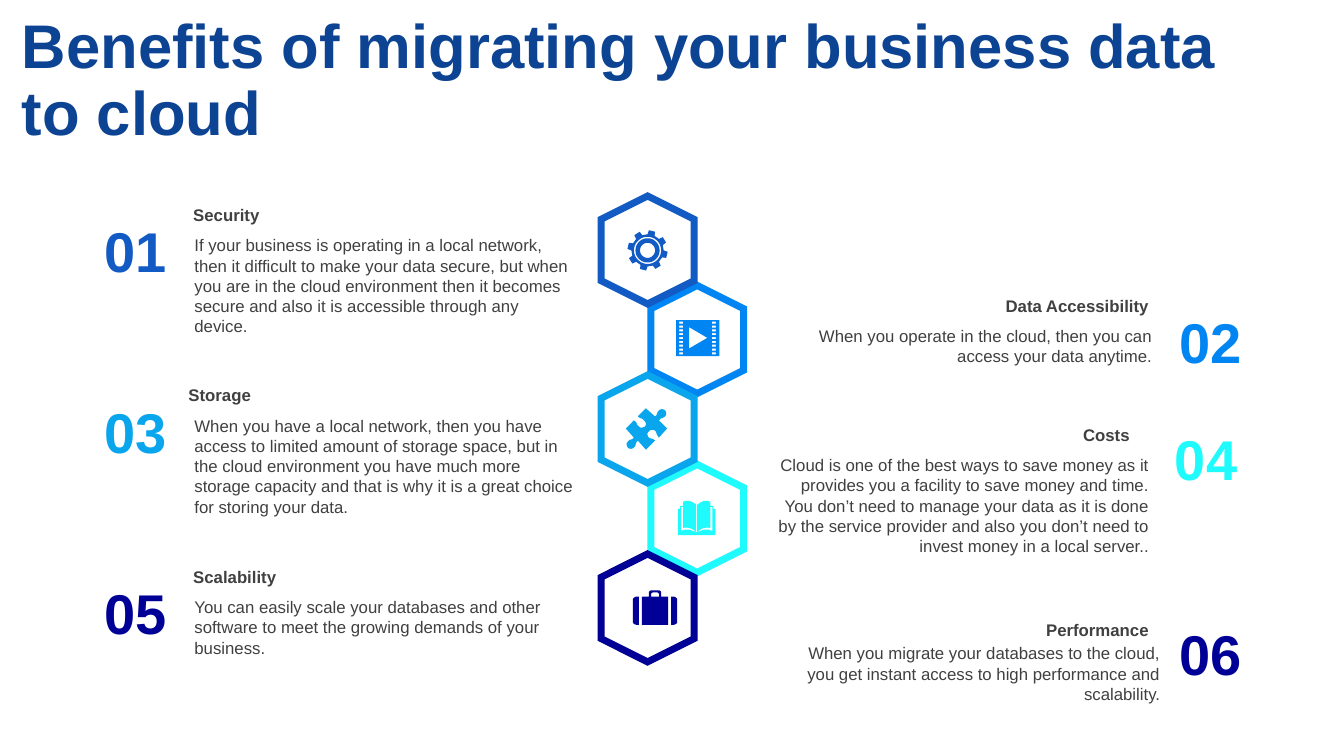
import math
from lxml import etree
from pptx import Presentation
from pptx import util as u
from pptx.dml.color import RGBColor
from pptx.enum import shapes, text

COLORS = {
    "title": "0D4393", "body": "404040", "white": "FFFFFF",
    "blue": "125AC4", "azure": "0085F2", "sky": "0AA6ED",
    "cyan": "1FFBFD", "navy": "000096",
}

prs = Presentation()
prs.slide_width, prs.slide_height = u.Cm(33.87), u.Cm(19.05)
s = prs.slides.add_slide(prs.slide_layouts[6])


def add_text(box, words, align, size, color, bold, **frame):
    sp = s.shapes.add_textbox(*[u.Cm(v) for v in box])
    tf = sp.text_frame
    for name, value in {"word_wrap": True, **frame}.items():
        setattr(tf, name, value)
    p = tf.paragraphs[0]
    p.alignment = align
    r = p.add_run()
    r.text = words
    for name, value in {"name": "Arial", "size": u.Pt(size), "bold": bold}.items():
        setattr(r.font, name, value)
    r.font.color.rgb = RGBColor.from_string(COLORS[color])
    return p


def add_icon(x, y, color, contours):
    fb = None
    for contour in contours:
        pts = []
        for step in contour:
            if len(step) == 2:
                pts.append(step)
                continue
            ctrl = [pts[-1], step[:2], step[2:4], step[4:]]
            for k in range(1, 9):
                t = k / 8
                w = [math.comb(3, i) * t**i * (1 - t)**(3 - i) for i in range(4)]
                pts.append(tuple(sum(a * c[axis] for a, c in zip(w, ctrl)) for axis in (0, 1)))
        pts = [(10 * px, 10 * py) for px, py in pts]
        if fb is None:
            fb = s.shapes.build_freeform(*pts[0], scale=u.Cm(2.54) / 1000)
        else:
            fb.move_to(*pts[0])
        fb.add_line_segments(pts[1:], close=True)
    sp = fb.convert_to_shape(u.Cm(x), u.Cm(y))
    sp.shadow.inherit = False
    sp.fill.solid()
    sp.fill.fore_color.rgb = RGBColor.from_string(COLORS[color])
    sp.line.fill.background()


p = add_text((0.3, 1.07, 32.16, 2), "Benefits of migrating your business data to cloud",
             text.PP_ALIGN.LEFT, 44, "title", True,
             vertical_anchor=text.MSO_ANCHOR.MIDDLE)
p.line_spacing = 0.9

hexagons = ["blue", "azure", "sky", "cyan", "navy"]
for i in (3, 1, 2, 0, 4):
    sp = s.shapes.add_shape(shapes.MSO_SHAPE.HEXAGON, u.Cm(14.96 + i % 2 * 1.25),
                            u.Cm(5.13 + i * 2.255), u.Cm(2.72), u.Cm(2.34))
    sp.rotation = 90
    sp.shadow.inherit = False
    sp.fill.solid()
    sp.fill.fore_color.rgb = RGBColor.from_string(COLORS["white"])
    sp.line.color.rgb = RGBColor.from_string(COLORS[hexagons[i]])
    sp.line.width = u.Pt(5)
    ns = sp.line._ln.nsmap["a"]
    etree.SubElement(sp.line._ln, f"{{{ns}}}miter", lim="800000")

L, R = text.PP_ALIGN.LEFT, text.PP_ALIGN.RIGHT
benefits = [
    ("01", "blue", L, 2.36, 4.62, 4.65, 5.03, 0.3, 0.77, "Security",
     "If your business is operating in a local network, then it difficult to make your data "
     "secure, but when you are in the cloud environment then it becomes secure and also it is "
     "accessible through any device."),
    ("02", "azure", R, 29.46, 19.2, 19.21, 7.32, 0.3, 0.77, "Data Accessibility",
     "When you operate in the cloud, then you can access your data anytime."),
    ("03", "sky", L, 2.36, 4.5, 4.65, 9.58, 0.3, 0.77, "Storage",
     "When you have a local network, then you have access to limited amount of storage space, "
     "but in the cloud environment you have much more storage capacity and that is why it is "
     "a great choice for storing your data."),
    ("04", "cyan", R, 29.34, 18.72, 19.13, 10.57, 0, 0.77, "Costs",
     "Cloud is one of the best ways to save money as it provides you a facility to save money "
     "and time. You don’t need to manage your data as it is done by the service provider and "
     "also you don’t need to invest money in a local server.."),
    ("05", "navy", L, 2.36, 4.62, 4.65, 14.15, 0.3, 0.77, "Scalability",
     "You can easily scale your databases and other software to meet the growing demands of "
     "your business."),
    ("06", "navy", R, 29.46, 19.2, 19.41, 15.49, 0, 0.59, "Performance",
     "When you migrate your databases to the cloud, you get instant access to high "
     "performance and scalability."),
]
grow = {"auto_size": text.MSO_AUTO_SIZE.SHAPE_TO_FIT_TEXT}
for num, color, align, num_x, head_x, body_x, y, num_dy, body_dy, head, body in benefits:
    lines = 1 + len(body) // 50
    add_text((num_x, y + num_dy, 2.11, 1.96), num, text.PP_ALIGN.CENTER, 40, color, True, **grow)
    add_text((body_x, y + body_dy, 10.08, 0.25 + 0.51 * lines), body, align, 12, "body", False, **grow)
    add_text((head_x, y, 10, 0.76), head, align, 12, "body", True, **grow)

teeth = [(r * math.sin(math.radians(a)), -r * math.cos(math.radians(a)))
         for n in range(8)
         for r, a in ((16, 45 * n), (20, 45 * n + 4), (20, 45 * n + 22), (16, 45 * n + 26))]
rings = [[(r * math.cos(math.radians(a)), r * math.sin(math.radians(a)))
          for a in range(0, 360, 10)] for r in (13.5, 12, 7.5)]
add_icon(16.32, 6.31, "blue", [teeth] + rings)

film = [[(0, 0), (43, 0), (43, 35.5), (0, 35.5)], [(13, 7), (13, 28), (31, 17.5)]]
for row in range(9):
    top = 1.5 + 3.8 * row
    film += [[(x, top), (x + 4, top), (x + 4, top + 2), (x, top + 2)] for x in (3, 35.5)]
add_icon(17.04, 8.07, "azure", film)

puzzle = [
    (39, 2), (40, 3, 41, 6, 39, 8), (37, 10, 35, 9, 33, 12), (41, 20), (33, 29),
    (30, 26, 31, 24, 29, 22), (27, 21, 24, 21, 23, 23), (21, 24, 21, 27, 23, 29),
    (26, 31, 26, 29, 29, 32), (20, 41), (12, 32), (9, 35, 11, 36, 8, 39),
    (6, 41, 3, 40, 2, 39), (1, 37, 0, 35, 2, 33), (4, 30, 6, 32, 8, 29), (0, 20),
    (8, 12), (12, 14, 10, 16, 13, 18), (15, 20, 17, 19, 19, 18),
    (20, 17, 21, 14, 18, 12), (16, 9, 15, 11, 12, 8), (20, 0), (29, 8),
    (32, 6, 30, 5, 33, 2), (35, 0, 38, 1, 39, 2),
]
add_icon(15.77, 10.29, "sky", [puzzle])

book_half = [
    (18, 4), (18, 31), (14, 27, 9, 26, 5, 27), (5, 6), (3, 6), (3, 30),
    (9, 27, 12, 29, 18, 31), (18.5, 31), (18.5, 34), (0, 34), (0, 8), (2, 8), (2, 5), (5, 5),
    (5, 1), (10, -1, 13, 0, 18, 4),
]
case_side = [(6, 6), (6, 34), (4, 34), (2, 34, 0, 33, 0, 31), (0, 9), (0, 8, 2, 6, 4, 6)]
case_body = [
    (18, 0), (26, 0), (27, 0, 28, 1, 28, 2), (28, 6), (35, 6), (35, 34), (9, 34), (9, 6),
    (16, 6), (16, 2), (16, 1, 17, 0, 18, 0),
]
case_grip = [(18, 6), (18, 4), (18, 3, 19, 2, 20, 2), (24, 2), (25, 2, 26, 3, 26, 4), (26, 6)]
for x, y, color, half, width, rest in (
        (17.09, 12.62, "cyan", book_half, 37, []),
        (15.95, 14.88, "navy", case_side, 44, [case_body, case_grip])):
    mirrored = [tuple(width - v if k % 2 == 0 else v for k, v in enumerate(step)) for step in half]
    add_icon(x, y, color, [half, mirrored] + rest)

prs.save("out.pptx")
